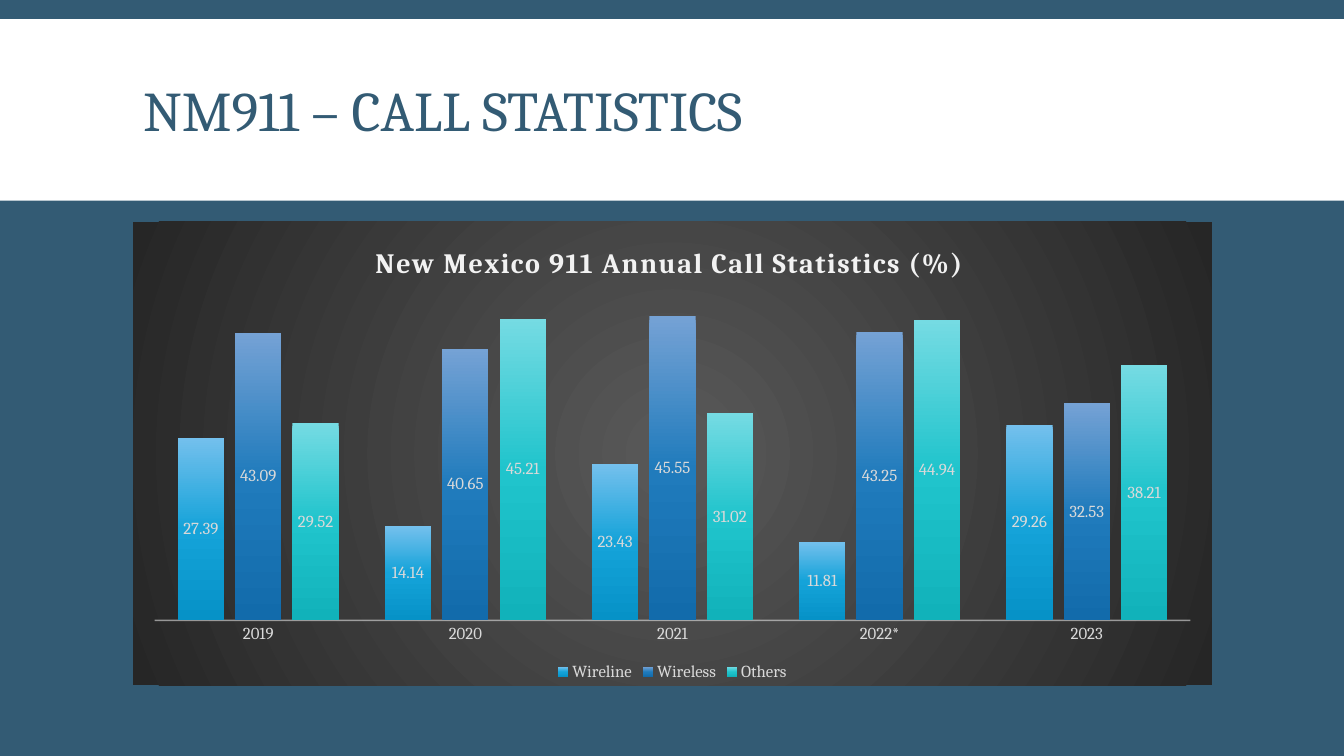
from dataclasses import dataclass
from lxml import etree
from pptx import Presentation
from pptx.chart.data import CategoryChartData as Data
from pptx.dml.color import RGBColor as RGB
from pptx.enum.chart import XL_CHART_TYPE as Kind, XL_LABEL_POSITION as Spot
from pptx.enum.chart import XL_LEGEND_POSITION as Side, XL_TICK_MARK as Tick
from pptx.enum.shapes import MSO_SHAPE as Form
from pptx.enum.text import MSO_ANCHOR as Anchor, MSO_AUTO_SIZE as Fit, PP_ALIGN as Align
from pptx.oxml import parse_xml
from pptx.oxml.ns import nsdecls, qn
from pptx.util import Inches, Pt


@dataclass(frozen=True)
class Theme:
    font: str = "Cambria"
    navy: str = "335B74"
    white: str = "FFFFFF"
    pale: str = "F2F2F2"
    grey: str = "D9D9D9"
    panel: tuple = ("595959", "262626")
    head: int = 40
    title: int = 20
    base: int = 10
    label: int = 12


THEME = Theme()
YEARS = ("2019", "2020", "2021", "2022*", "2023")
CALLS = (
    ("Wireline", (27.39, 14.14, 23.43, 11.81, 29.26), ("74C0ED", "15A3D9", "0692C7")),
    ("Wireless", (43.09, 40.65, 45.55, 43.25, 32.53), ("75A2D5", "207BBC", "126BAB")),
    ("Others", (29.52, 45.21, 31.02, 44.94, 38.21), ("75DBE3", "20C4CC", "11B2BA")),
)
LINEAR = '<a:lin ang="5400000" scaled="0"/>'
RADIAL = '<a:path path="circle"><a:fillToRect l="50000" t="50000" r="50000" b="50000"/></a:path>'


def style(font, size, color):
    font.name = THEME.font
    font.size = Pt(size)
    font.color.rgb = RGB.from_string(color)


def blend(colors, course):
    step = 100000 // (len(colors) - 1)
    stops = "".join(
        f'<a:gs pos="{i * step}"><a:srgbClr val="{color}"/></a:gs>'
        for i, color in enumerate(colors))
    return parse_xml(
        f'<a:gradFill {nsdecls("a")} rotWithShape="1">'
        f'<a:gsLst>{stops}</a:gsLst>{course}</a:gradFill>')


def layout(*parts):
    tags = "".join(f'<c:{tag} val="{val}"/>' for tag, val in parts)
    return parse_xml(
        f'<c:layout {nsdecls("c")}><c:manualLayout>{tags}</c:manualLayout></c:layout>')


def place(parent, spot, index):
    for old in parent.findall(qn("c:layout")):
        parent.remove(old)
    parent.insert(index, spot)


def add_head(slide, x, y, w, h):
    band = slide.shapes.add_shape(Form.RECTANGLE, *map(Inches, (x, y, w, h)))
    band.shadow.inherit = False
    band.fill.solid()
    band.fill.fore_color.rgb = RGB.from_string(THEME.white)
    band.line.fill.background()
    slide.shapes._spTree.insert(2, band._element)

    title = slide.shapes.title
    title.left, title.top = Inches(x + 1.32), Inches(y + 0.12)
    title.width, title.height = Inches(w - 2.63), Inches(h - 0.15)
    frame = title.text_frame
    frame.word_wrap = True
    frame.auto_size = Fit.NONE
    frame.vertical_anchor = Anchor.MIDDLE
    para = frame.paragraphs[0]
    para.alignment = Align.LEFT
    para.line_spacing = 0.85
    run = para.add_run()
    run.text = "NM911 – CALL STATISTICS"
    style(run.font, THEME.head, THEME.navy)


def add_title(chart):
    para = chart.chart_title.text_frame.paragraphs[0]
    run = para.add_run()
    run.text = "New Mexico 911 Annual Call Statistics (%)"
    style(run.font, THEME.title, THEME.pale)
    run.font.bold = True
    run._r.get_or_add_rPr().set("spc", "100")
    spot = layout(("xMode", "edge"), ("yMode", "edge"), ("x", 0.22), ("y", 0.04))
    place(chart.chart_title._element, spot, 1)
    chart.chart_title.include_in_layout = False


def set_axes(chart):
    scale = chart.value_axis
    scale.minimum_scale, scale.maximum_scale = 0, 50
    scale.has_major_gridlines = False
    scale.visible = False
    axis = chart.category_axis
    axis.major_tick_mark = axis.minor_tick_mark = Tick.NONE
    style(axis.tick_labels.font, THEME.label, THEME.grey)
    line = axis.format.line
    line.width = Pt(1)
    line.color.rgb = RGB.from_string(THEME.pale)
    tint = axis._element.find(f".//{qn('a:ln')}//{qn('a:srgbClr')}")
    etree.SubElement(tint, qn("a:alpha")).set("val", "54000")


def set_bars(plot):
    plot.gap_width = 100
    plot.overlap = -24
    plot.vary_by_categories = False
    for bars, (_, _, colors) in zip(plot.series, CALLS):
        bars.invert_if_negative = False
        bars._element.get_or_add_spPr().insert(0, blend(colors, LINEAR))
        labels = bars.data_labels
        labels.show_value = True
        labels.position = Spot.CENTER
        style(labels.font, THEME.label, THEME.grey)


def add_calls(slide, x, y, w, h):
    data = Data(number_format="0.00")
    data.categories = YEARS
    for name, values, _ in CALLS:
        data.add_series(name, values)
    frame = slide.shapes.add_chart(
        Kind.COLUMN_CLUSTERED, *map(Inches, (x, y, w, h)), data)
    chart = frame.chart
    style(chart.font, THEME.base, THEME.white)
    add_title(chart)
    set_axes(chart)
    set_bars(chart.plots[0])
    chart.has_legend = True
    chart.legend.position = Side.BOTTOM
    chart.legend.include_in_layout = False
    style(chart.legend.font, THEME.label, THEME.grey)

    body = chart._chartSpace.find(qn("c:chart"))
    area = body.find(qn("c:plotArea"))
    spot = layout(("layoutTarget", "inner"), ("xMode", "edge"), ("yMode", "edge"),
                  ("x", 0.02), ("y", 0.14), ("w", 0.96), ("h", 0.72))
    place(area, spot, 0)
    panel = parse_xml(f'<c:spPr {nsdecls("c", "a")}><a:ln><a:noFill/></a:ln></c:spPr>')
    panel.insert(0, blend(THEME.panel, RADIAL))
    body.addnext(panel)


def main():
    deck = Presentation()
    deck.slide_width, deck.slide_height = Inches(13.33), Inches(7.5)
    slide = deck.slides.add_slide(deck.slide_layouts[5])
    slide.background.fill.solid()
    slide.background.fill.fore_color.rgb = RGB.from_string(THEME.navy)
    add_head(slide, 0, 0.19, 13.33, 1.8)
    add_calls(slide, 1.32, 2.2, 10.7, 4.6)
    deck.save("out.pptx")


if __name__ == "__main__":
    main()
